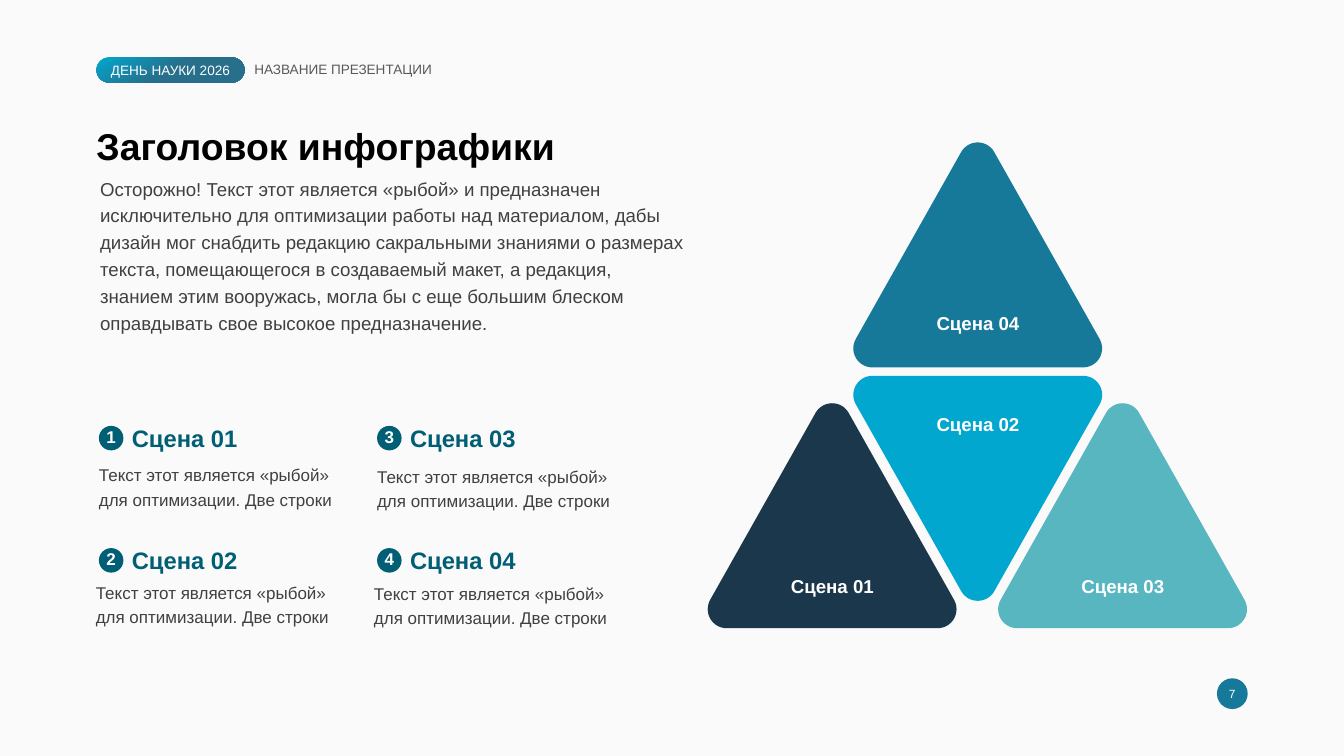
"""Build the infographic slide with four triangular scenes."""
from math import cos, radians, sin

from pptx import Presentation
from pptx.dml.color import RGBColor
from pptx.enum.shapes import MSO_SHAPE
from pptx.enum.text import MSO_ANCHOR, PP_ALIGN
from pptx.util import Cm, Pt

COLORS = {
    "background": "FAFAFA", "title": "000000", "body": "404040", "header": "595959",
    "white": "FFFFFF", "accent": "005E75", "navy": "1B374B", "cyan": "01A7CE",
    "aqua": "58B6C0", "teal": "17799A", "steel": "276F8B",
}


def paint(sp, color):
    sp.shadow.inherit = False
    sp.line.fill.background()
    sp.fill.solid()
    sp.fill.fore_color.rgb = RGBColor.from_string(COLORS[color])


def write(sp, text, size, color, bold=False, align=PP_ALIGN.LEFT, spacing=1.0,
          inset=0, anchor=MSO_ANCHOR.TOP):
    tf = sp.text_frame
    tf.word_wrap = True
    tf.vertical_anchor = anchor
    tf.margin_left = tf.margin_right = tf.margin_top = tf.margin_bottom = Cm(inset)
    p = tf.paragraphs[0]
    p.text = text
    p.alignment = align
    p.line_spacing = spacing
    for r in p.runs:
        r.font.name = "Arial"
        r.font.size = Pt(size)
        r.font.bold = bold
        r.font.color.rgb = RGBColor.from_string(COLORS[color])


prs = Presentation()
prs.slide_width, prs.slide_height = Cm(55.85), Cm(31.42)
s = prs.slides.add_slide(prs.slide_layouts[5])
s.background.fill.solid()
s.background.fill.fore_color.rgb = RGBColor.from_string(COLORS["background"])
shapes = s.shapes

title = shapes.title
title.left, title.top, title.width, title.height = Cm(4.01), Cm(5.31), Cm(37.9), Cm(1.7)
write(title, "Заголовок инфографики", 44, "title", bold=True, spacing=0.9)

pill = shapes.add_shape(MSO_SHAPE.ROUNDED_RECTANGLE, Cm(4.01), Cm(2.39), Cm(6.15), Cm(1.04))
pill.adjustments[0] = 0.5
paint(pill, "cyan")
pill.fill.gradient()
pill.fill.gradient_angle = 300
for stop, (position, color) in zip(pill.fill.gradient_stops, [(0, "cyan"), (0.51, "steel")]):
    stop.position = position
    stop.color.rgb = RGBColor.from_string(COLORS[color])
write(pill, "ДЕНЬ НАУКИ 2026", 16, "white", align=PP_ALIGN.CENTER, anchor=MSO_ANCHOR.MIDDLE)

header = shapes.add_textbox(Cm(10.57), Cm(2.62), Cm(9.09), Cm(0.61))
write(header, "НАЗВАНИЕ ПРЕЗЕНТАЦИИ", 16, "header", spacing=0.9)

intro = shapes.add_textbox(Cm(4.01), Cm(7.04), Cm(24.77), Cm(6.96))
write(intro, "Осторожно! Текст этот является «рыбой» и предназначен исключительно для "
      "оптимизации работы над материалом, дабы дизайн мог снабдить редакцию сакральными "
      "знаниями о размерах текста, помещающегося в создаваемый макет, а редакция, знанием "
      "этим вооружась, могла бы с еще большим блеском оправдывать свое высокое "
      "предназначение.", 22, "body", spacing=1.2, inset=0.15)

for i in range(4):
    col, row = divmod(i, 2)
    x, y = 4.11 + 11.56 * col, 17.7 + 5.08 * row
    badge = shapes.add_shape(MSO_SHAPE.OVAL, Cm(x), Cm(y), Cm(1.02), Cm(1.02))
    paint(badge, "accent")
    write(badge, str(i + 1), 20, "white", bold=True, align=PP_ALIGN.CENTER,
          anchor=MSO_ANCHOR.MIDDLE)
    badge.text_frame.margin_bottom = Cm(0.1)
    heading = shapes.add_textbox(Cm(x + 1.22), Cm(y - 0.23), Cm(7.87), Cm(1.47))
    write(heading, f"Сцена 0{i + 1}", 28, "accent", bold=True, inset=0.15)
    caption = shapes.add_textbox(Cm(x - 0.13 * row), Cm(19.15 + 4.88 * row + 0.05 * col),
                                 Cm(11), Cm(1.96))
    write(caption, "Текст этот является «рыбой»\vдля оптимизации. Две строки", 20, "body",
          spacing=1.2)

radius = 0.79
corners = [(5.17, 0.79, 209.4), (9.55, 8.56, 330.6), (0.79, 8.56, 90)]
outline = [
    (Cm(cx + radius * cos(radians(start + step * 119.4 / 16))),
     Cm(cy + radius * sin(radians(start + step * 119.4 / 16))))
    for cx, cy, start in corners for step in range(17)
]
scenes = [
    ("Сцена 01", "navy", 29.41, 16.76, 23.75, 0),
    ("Сцена 03", "aqua", 41.48, 16.76, 23.75, 0),
    ("Сцена 04", "teal", 35.46, 5.92, 12.8, 0),
    ("Сцена 02", "cyan", 35.46, 15.62, 17, 180),
]
for name, color, x, y, label_y, rotation in scenes:
    builder = shapes.build_freeform(*outline[0])
    builder.add_line_segments(outline[1:], close=True)
    triangle = builder.convert_to_shape(Cm(x), Cm(y))
    triangle.rotation = rotation
    paint(triangle, color)
    label = shapes.add_textbox(Cm(x + 1.98), Cm(label_y), Cm(6.4), Cm(1.22))
    write(label, name, 22, "white", bold=True, align=PP_ALIGN.CENTER, inset=0.15)

page = shapes.add_shape(MSO_SHAPE.OVAL, Cm(50.57), Cm(28.19), Cm(1.28), Cm(1.28))
paint(page, "teal")
write(page, "7", 14, "white", align=PP_ALIGN.CENTER, anchor=MSO_ANCHOR.MIDDLE)

prs.save("out.pptx")
